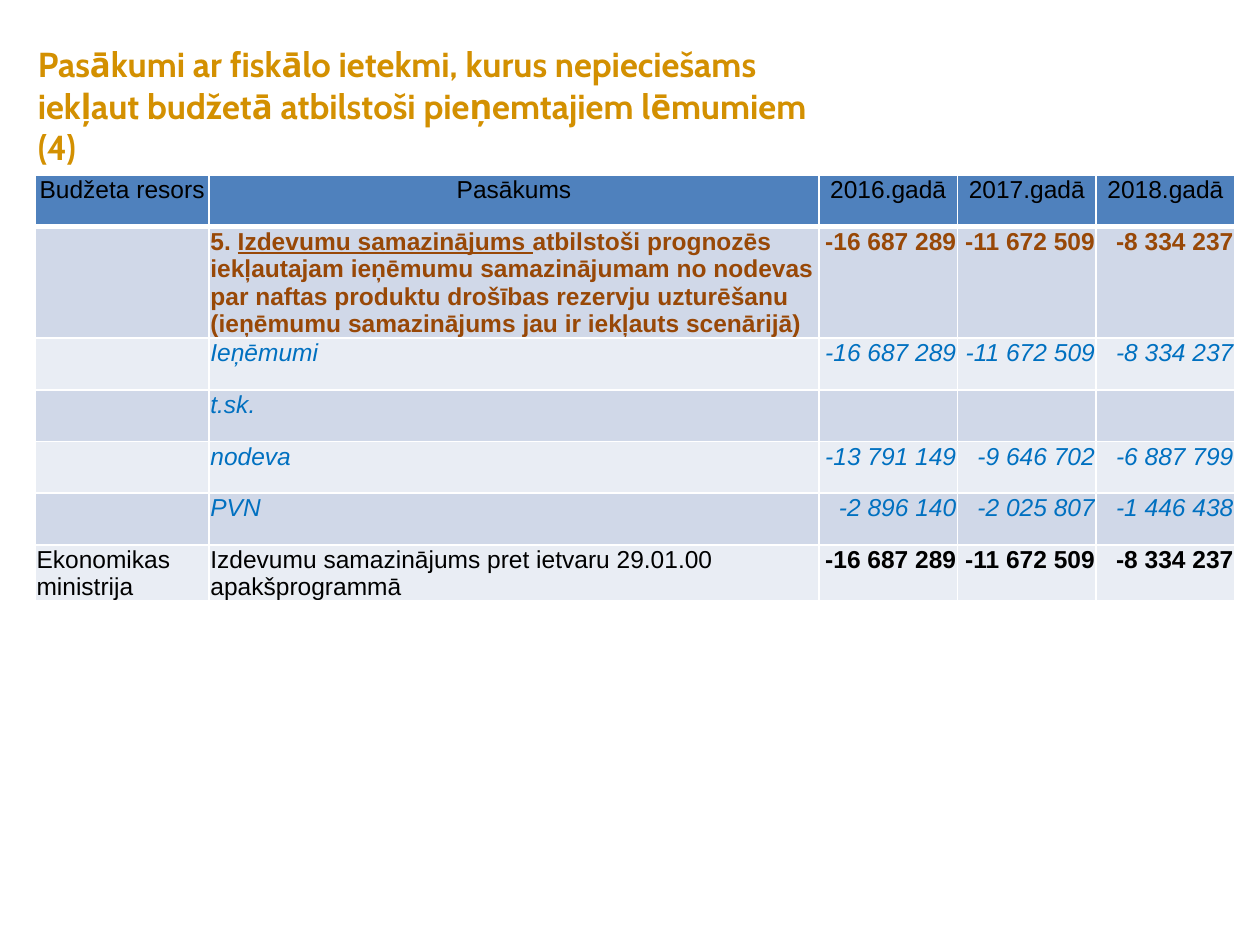
from lxml import etree
from pptx import Presentation
from pptx import util as u
from pptx.dml import color
from pptx.enum import text
from pptx.oxml import ns

WIDTH, HEIGHT = u.Inches(10), u.Inches(7.5)
TITLE = "Pasākumi ar fiskālo ietekmi, kurus nepieciešams iekļaut budžetā atbilstoši pieņemtajiem lēmumiem (4)"
HEADER = ["Budžeta resors", "Pasākums", "2016.gadā", "2017.gadā", "2018.gadā"]
TOTALS = ["-16 687 289", "-11 672 509", "-8 334 237"]
MEASURE = [
    "5. ",
    "Izdevumu samazinājums ",
    "atbilstoši prognozēs iekļautajam ieņēmumu samazinājumam no nodevas par naftas produktu "
    "drošības rezervju uzturēšanu (ieņēmumu samazinājums jau ir iekļauts scenārijā)",
]
DETAIL = {"tone": "0070C0", "italic": True}
ROWS = [
    (["", MEASURE, *TOTALS], {"tone": "984807", "bold": True}),
    (["", "Ieņēmumi", *TOTALS], DETAIL),
    (["", "t.sk.", "", "", ""], DETAIL),
    (["", "nodeva", "-13 791 149", "-9 646 702", "-6 887 799"], DETAIL),
    (["", "PVN", "-2 896 140", "-2 025 807", "-1 446 438"], DETAIL),
    (["Ekonomikas ministrija", "Izdevumu samazinājums pret ietvaru 29.01.00 apakšprogrammā", *TOTALS],
     {"bold_values": True}),
]
COLUMN_WIDTHS = [1.38, 4.84, 1.1, 1.1, 1.1]
ROW_HEIGHT = 0.41
HEADER_FILL, BANDS = "4F81BD", ["D0D8E8", "E9EDF4"]


def paint(target, tone):
    """Give a font or a solid fill the colour of a hex string."""
    colour = target.color if hasattr(target, "color") else target.fore_color
    colour.rgb = color.RGBColor.from_string(tone)


def style_font(font, name, size, tone, bold=False, italic=False):
    """Set the typeface, size, colour and weight of a font."""
    font.name, font.size = name, u.Pt(size)
    font.bold, font.italic = bold, italic
    paint(font, tone)


def place_title(title, left, top, width, height):
    """Place and format the title in the given box."""
    title.left, title.top, title.width, title.height = map(int, (left, top, width, height))
    frame = title.text_frame
    frame.text = TITLE
    frame.word_wrap = True
    frame.auto_size = text.MSO_AUTO_SIZE.NONE
    frame.vertical_anchor = text.MSO_ANCHOR.MIDDLE
    para = frame.paragraphs[0]
    para.alignment = text.PP_ALIGN.LEFT
    style_font(para.font, "Cabin", 19.8, "D39001", bold=True)


def rule_cell(cell, side, points, tone):
    """Draw a solid border along one side of a cell."""
    properties = cell._tc.get_or_add_tcPr()
    line = etree.Element(ns.qn(f"a:ln{side}"), w=str(u.Pt(points)))
    fill = etree.SubElement(line, ns.qn("a:solidFill"))
    etree.SubElement(fill, ns.qn("a:srgbClr"), val=tone)
    properties.insert(0, line)


def fill_cell(cell, content, fill, align, tone="000000", bold=False, italic=False):
    """Write one cell; a list holds plain and underlined parts in turn."""
    cell.fill.solid()
    paint(cell.fill, fill)
    cell.margin_left = cell.margin_right = cell.margin_top = u.Inches(0.01)
    cell.margin_bottom = 0
    if not content:
        return
    para = cell.text_frame.paragraphs[0]
    para.alignment = align
    style_font(para.font, "Arial", 14, tone, bold, italic)
    parts = [content] if isinstance(content, str) else content
    for index, part in enumerate(parts):
        span = para.add_run()
        span.text = part
        span.font.underline = index % 2 == 1


def place_table(page, left, top):
    """Build the budget table from its top left corner."""
    row_count = len(ROWS) + 1
    table = page.shapes.add_table(
        row_count, len(HEADER), int(left), int(top),
        u.Inches(sum(COLUMN_WIDTHS)), u.Inches(ROW_HEIGHT * row_count)).table
    for column, width in zip(table.columns, COLUMN_WIDTHS):
        column.width = u.Inches(width)
    for row in table.rows:
        row.height = u.Inches(ROW_HEIGHT)
    for column, label in enumerate(HEADER):
        fill_cell(table.cell(0, column), label, HEADER_FILL, text.PP_ALIGN.CENTER)
        rule_cell(table.cell(0, column), "B", 3, "FFFFFF")
    for row, (contents, style) in enumerate(ROWS, 1):
        for column, content in enumerate(contents):
            is_value = column >= 2
            fill_cell(
                table.cell(row, column), content, BANDS[(row - 1) % 2],
                text.PP_ALIGN.RIGHT if is_value else text.PP_ALIGN.LEFT,
                style.get("tone", "000000"),
                style.get("bold", is_value and style.get("bold_values", False)),
                style.get("italic", False))


def main():
    """Build the one-page deck and save it."""
    deck = Presentation()
    deck.slide_width, deck.slide_height = WIDTH, HEIGHT
    page = deck.slides.add_slide(deck.slide_layouts[5])
    place_table(page, u.Inches(0.28), u.Inches(1.39))
    place_title(page.shapes.title, WIDTH * 0.02, HEIGHT * 0.08, WIDTH * 0.66, u.Inches(0.47))
    deck.save("out.pptx")


if __name__ == "__main__":
    main()
